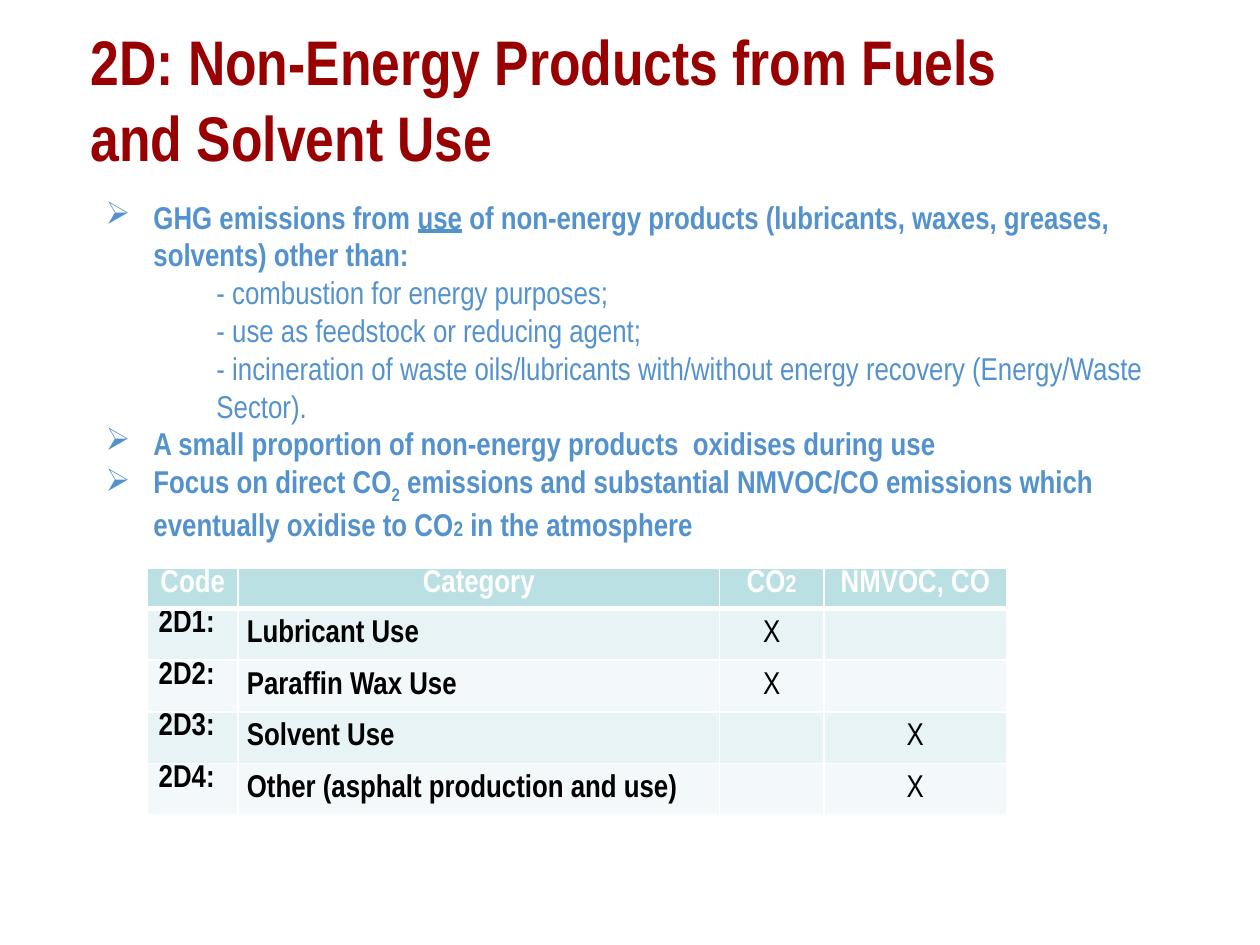
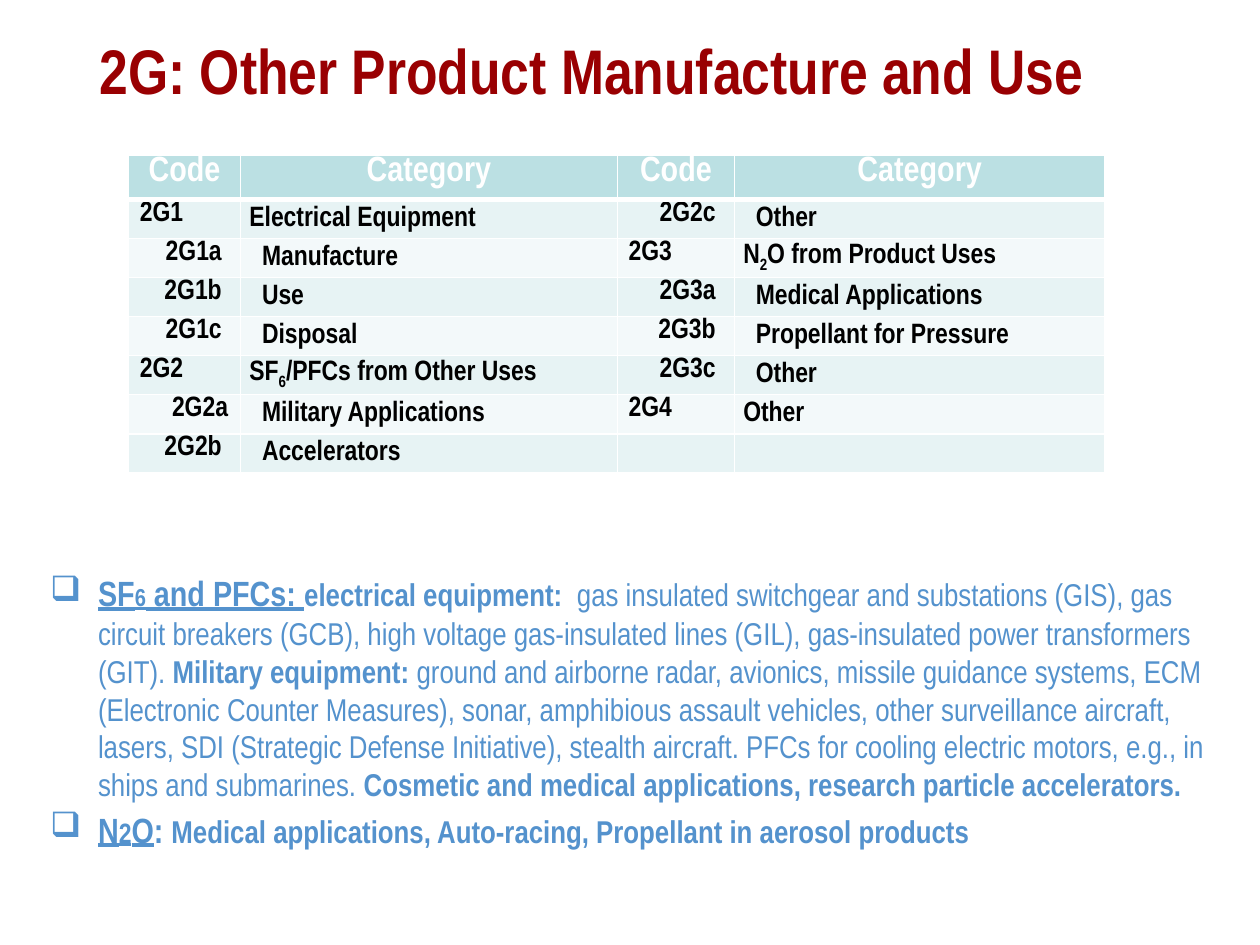
from pptx import Presentation
from pptx.dml.color import RGBColor as Rgb
from pptx.enum.text import MSO_ANCHOR as Anchor, MSO_AUTO_SIZE as Fit, PP_ALIGN as Align
from pptx.oxml.ns import qn
from pptx.util import Inches, Pt
from lxml.etree import SubElement as Sub

FONT = "Arial Narrow"
HUES = {"title": "990002", "body": "5492CD", "head": "BBE0E3", "odd": "E7F3F4",
        "even": "F3F9FA", "white": "FFFFFF", "ink": "000000"}


def write(par, runs, hue):
    for text, size, marks in runs:
        run = par.add_run()
        run.text = text
        font = run.font
        font.name = FONT
        font.size = Pt(size)
        font.bold = "b" in marks
        font.underline = "u" in marks
        font.color.rgb = Rgb.from_string(HUES[hue])
        if "s" in marks:
            font._element.set("baseline", "-25000")


def edge(cell, side, width):
    line = Sub(cell._tc.get_or_add_tcPr(), qn(f"a:ln{side}"), w=str(Pt(width)))
    fill = Sub(line, qn("a:solidFill"))
    Sub(fill, qn("a:srgbClr"), val=HUES["white"])


decks = [
    {
        "title": "2D: Non-Energy Products from Fuels\vand Solvent Use",
        "spot": (0.62, 0.13, 8.94, 1.3),
        "body": (0.74, 1.52, 8.9, 3),
        "mark": "➢",
        "gap": 0,
        "text": [
            (1, [("GHG emissions from ", 18, "b"), ("use", 18, "bu"),
                 (" of non-energy products (lubricants, waxes, greases, solvents) other than:", 18, "b")]),
            (2, [("- combustion for energy purposes;", 18, "")]),
            (2, [("- use as feedstock or reducing agent;", 18, "")]),
            (2, [("- incineration of waste oils/lubricants with/without energy recovery "
                  "(Energy/Waste Sector).", 18, "")]),
            (1, [("A small proportion of non-energy products  oxidises during use", 18, "b")]),
            (1, [("Focus on direct CO", 18, "b"), ("2", 18, "bs"),
                 (" emissions and substantial NMVOC/CO emissions which eventually oxidise to CO", 18, "b"),
                 ("2", 12, "b"), (" in the atmosphere", 18, "b")]),
        ],
        "table": (1.17, 4.51),
        "cols": [0.72, 3.82, 0.83, 1.45],
        "highs": (0.32, 0.41),
        "sizes": (18, 18),
        "rows": [
            ["Code", "Category", [("CO", 18, "b"), ("2", 14, "b")], "NMVOC, CO"],
            ["2D1:", "Lubricant Use", "X", ""],
            ["2D2:", "Paraffin Wax Use", "X", ""],
            ["2D3:", "Solvent Use", "", "X"],
            ["2D4:", "Other (asphalt production and use)", "", "X"],
        ],
    },
    {
        "title": "2G: Other Product Manufacture and Use",
        "spot": (0.69, 0.13, 9.7, 0.84),
        "body": (0.3, 4.49, 9.4, 2.78),
        "mark": "❑",
        "gap": 3,
        "text": [
            (1, [("SF", 20, "bu"), ("6", 14, "bu"), (" and PFCs: ", 20, "bu"),
                 ("electrical equipment:  ", 18, "b"),
                 ("gas insulated switchgear and substations (GIS), gas circuit breakers (GCB), "
                  "high voltage gas-insulated lines (GIL), gas-insulated power transformers (GIT). ", 18, ""),
                 ("Military equipment: ", 18, "b"),
                 ("ground and airborne radar, avionics, missile guidance systems, ECM (Electronic "
                  "Counter Measures), sonar, amphibious assault vehicles, other surveillance aircraft, "
                  "lasers, SDI (Strategic Defense Initiative), stealth aircraft. PFCs for cooling "
                  "electric motors, e.g., in ships and submarines. ", 18, ""),
                 ("Cosmetic and medical applications, research particle accelerators.", 18, "b")]),
            (1, [("N", 20, "bu"), ("2", 16, "bu"), ("O", 20, "bu"), (": ", 20, "b"),
                 ("Medical applications, Auto-racing, Propellant in aerosol products", 18, "b")]),
        ],
        "table": (1.02, 1.23),
        "cols": [0.89, 2.99, 0.93, 2.94],
        "highs": (0.35, 0.31),
        "sizes": (20, 16),
        "rows": [
            ["Code", "Category", "Code", "Category"],
            ["2G1", "Electrical Equipment", "2G2c", "Other"],
            ["2G1a", "Manufacture", "2G3",
             [("N", 16, "b"), ("2", 16, "bs"), ("O from Product Uses", 16, "b")]],
            ["2G1b", "Use", "2G3a", "Medical Applications"],
            ["2G1c", "Disposal", "2G3b", "Propellant for Pressure"],
            ["2G2", [("SF", 16, "b"), ("6", 16, "bs"), ("/PFCs from Other Uses", 16, "b")], "2G3c", "Other"],
            ["2G2a", "Military Applications", "2G4", "Other"],
            ["2G2b", "Accelerators", "", ""],
        ],
    },
]

prs = Presentation()
prs.slide_width, prs.slide_height = Inches(10), Inches(7.5)

for deck in decks:
    slide = prs.slides.add_slide(prs.slide_layouts[5])
    title = slide.shapes.title
    title.left, title.top, title.width, title.height = map(Inches, deck["spot"])
    frame = title.text_frame
    frame.text = deck["title"]
    frame.auto_size = Fit.NONE
    frame.vertical_anchor = Anchor.MIDDLE
    par = frame.paragraphs[0]
    par.alignment = Align.LEFT
    for run in par.runs:
        run.font.name = FONT
        run.font.size = Pt(36)
        run.font.bold = True
        run.font.color.rgb = Rgb.from_string(HUES["title"])

    frame = slide.shapes.add_textbox(*map(Inches, deck["body"])).text_frame
    frame.word_wrap = True
    for num, (level, runs) in enumerate(deck["text"]):
        par = frame.add_paragraph() if num else frame.paragraphs[0]
        props = par._p.get_or_add_pPr()
        if level == 1:
            props.set("marL", str(Inches(0.38)))
            props.set("indent", str(Inches(-0.38)))
            Sub(props, qn("a:buChar"), char=deck["mark"])
        else:
            par.level = 1
            props.set("marL", str(Inches(0.88)))
            props.set("indent", "0")
            Sub(props, qn("a:buNone"))
        par.space_before = Pt(deck["gap"] if num else 0)
        write(par, runs, "body")

    rows, cols = deck["rows"], deck["cols"]
    first, rest = deck["highs"]
    size = (sum(cols), first + rest * (len(rows) - 1))
    grid = slide.shapes.add_table(len(rows), len(cols), *map(Inches, deck["table"] + size)).table
    grid.horz_banding = False
    for col, width in zip(grid.columns, cols):
        col.width = Inches(width)
    for y, row in enumerate(rows):
        grid.rows[y].height = Inches(rest if y else first)
        for x, text in enumerate(row):
            cell = grid.cell(y, x)
            for side in "LRTB":
                thick = (y, side) in ((0, "B"), (1, "T"))
                edge(cell, side, 3 if thick else 1)
            cell.fill.solid()
            tone = "head" if y == 0 else "odd" if y % 2 else "even"
            cell.fill.fore_color.rgb = Rgb.from_string(HUES[tone])
            code = y == 0 or row[x][:2] in ("2D", "2G")
            cell.margin_left = cell.margin_right = Inches(0.09 if code else 0.07)
            cell.margin_top = cell.margin_bottom = Inches(0.01 if code else 0)
            cell.vertical_anchor = Anchor.TOP if code else Anchor.MIDDLE
            par = cell.text_frame.paragraphs[0]
            pt = deck["sizes"][min(y, 1)]
            if not text:
                par.font.size = Pt(pt)
                continue
            if y == 0 or text == "X":
                par.alignment = Align.CENTER
            elif code and len(text) == 4 and text[-1] != ":":
                par.alignment = Align.RIGHT
                cell.margin_right = Inches(0.1 if text == "2G2a" else 0.15)
            elif x % 2 and len(row[x - 1]) == 4 and row[x - 1][-1] != ":":
                cell.margin_left = Inches(0.17)
            runs = [(text, pt, "" if text == "X" else "b")] if isinstance(text, str) else text
            write(par, runs, "ink" if y else "white")

prs.save("out.pptx")
